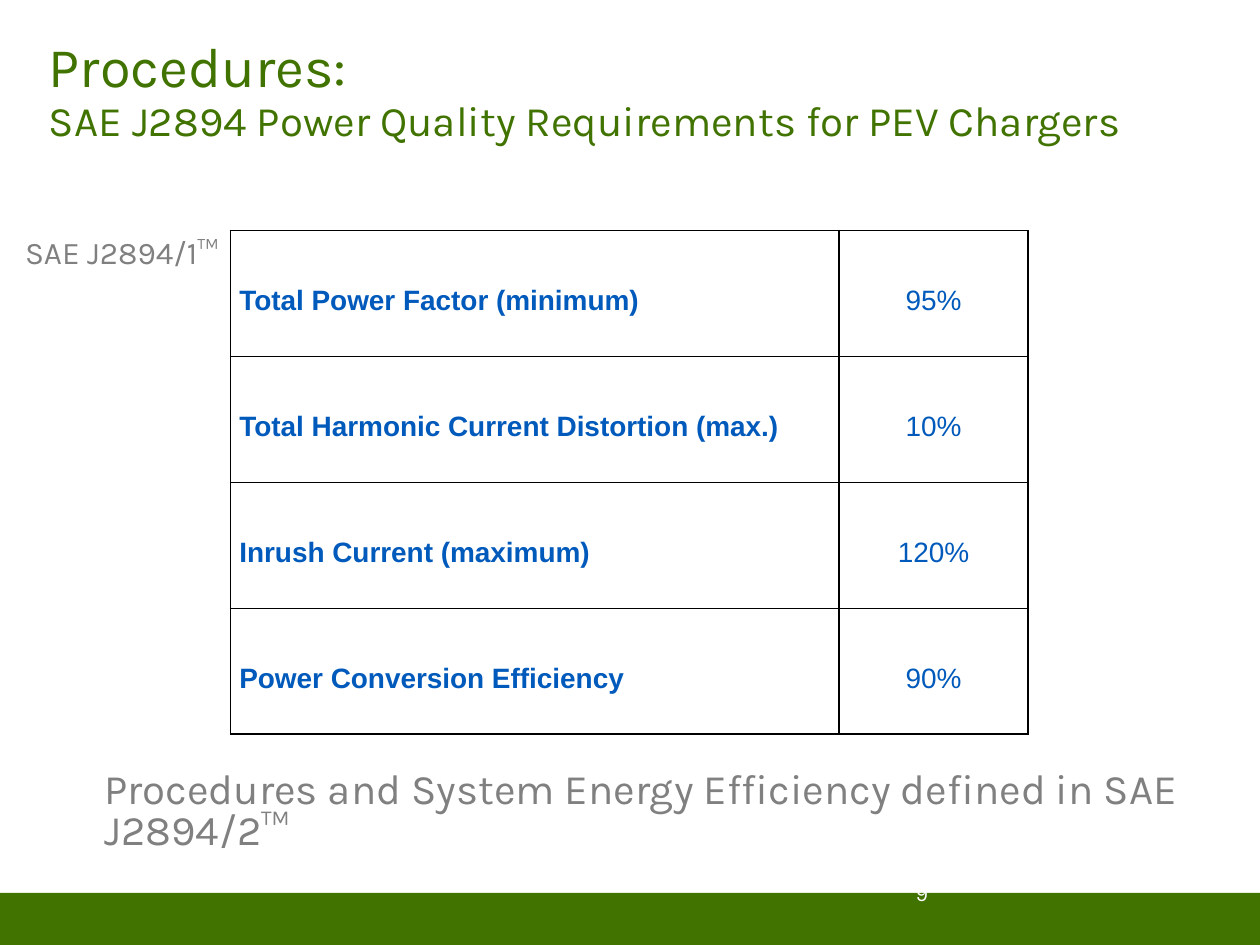
from dataclasses import dataclass

import lxml.etree
import pptx
import pptx.dml.color
import pptx.enum.shapes
import pptx.enum.text
import pptx.oxml.ns
import pptx.util

WIDTH, HEIGHT = 10, 7.5
GREEN, GRAY, BLUE, WHITE, BLACK = "417300", "808080", "005ABB", "FFFFFF", "000000"
MIDDLE = pptx.enum.text.MSO_ANCHOR.MIDDLE
TOP = pptx.enum.text.MSO_ANCHOR.TOP
LEFT = pptx.enum.text.PP_ALIGN.LEFT
CENTER = pptx.enum.text.PP_ALIGN.CENTER


@dataclass
class Area:
    """A rectangle given as shares of the slide's width and height."""
    left: float
    top: float
    width: float
    height: float

    def lengths(self) -> list:
        shares = (self.left, self.top, self.width, self.height)
        return [pptx.util.Inches(share * side)
                for share, side in zip(shares, (WIDTH, HEIGHT) * 2)]


@dataclass
class Label:
    area: Area
    lines: list  # pairs of wording and point size
    color: str
    spacing: float = 1.0
    anchor: pptx.enum.text.MSO_ANCHOR = TOP


@dataclass
class Requirement:
    name: str
    limit: str


def rgb(color: str) -> pptx.dml.color.RGBColor:
    return pptx.dml.color.RGBColor.from_string(color)


def draw_label(page, label: Label) -> None:
    box = page.shapes.add_textbox(*label.area.lengths())
    frame = box.text_frame
    frame.word_wrap = True
    frame.vertical_anchor = label.anchor
    para = frame.paragraphs[0]
    para.line_spacing = label.spacing
    para.font.name = "Karla"
    para.font.color.rgb = rgb(label.color)
    for index, (wording, size) in enumerate(label.lines):
        if index:
            para.add_line_break()
        span = para.add_run()
        span.text = wording
        span.font.size = pptx.util.Pt(size)


def add_borders(cell, color: str, points: float) -> None:
    properties = cell._tc.get_or_add_tcPr()
    name = pptx.oxml.ns.qn
    for index, side in enumerate(("a:lnL", "a:lnR", "a:lnT", "a:lnB")):
        line = lxml.etree.Element(name(side), w=str(pptx.util.Pt(points)))
        fill = lxml.etree.SubElement(line, name("a:solidFill"))
        lxml.etree.SubElement(fill, name("a:srgbClr"), val=color)
        properties.insert(index, line)


def fill_cell(cell, wording: str, bold: bool, alignment) -> None:
    cell.fill.background()
    add_borders(cell, BLACK, 1)
    cell.vertical_anchor = MIDDLE
    cell.margin_left = cell.margin_right = pptx.util.Inches(0.07)
    cell.margin_top = cell.margin_bottom = 0
    para = cell.text_frame.paragraphs[0]
    para.text = wording
    para.alignment = alignment
    para.line_spacing = 1.5
    para.font.name = "Arial"
    para.font.size = pptx.util.Pt(16)
    para.font.bold = bold
    para.font.color.rgb = rgb(BLUE)


def draw_requirements(page, area: Area, requirements: list, shares: tuple) -> None:
    frame = page.shapes.add_table(len(requirements), len(shares), *area.lengths())
    table = frame.table
    table.first_row = table.horz_banding = False
    for column, share in zip(table.columns, shares):
        column.width = pptx.util.Inches(area.width * WIDTH * share)
    for row, requirement in enumerate(requirements):
        fill_cell(table.cell(row, 0), requirement.name, True, LEFT)
        fill_cell(table.cell(row, 1), requirement.limit, False, CENTER)


def draw_band(page, area: Area, color: str) -> None:
    band = page.shapes.add_shape(
        pptx.enum.shapes.MSO_SHAPE.RECTANGLE, *area.lengths())
    band.shadow.inherit = False
    band.fill.solid()
    band.fill.fore_color.rgb = rgb(color)
    band.line.fill.background()


TITLE = Label(
    Area(0.029, 0.036, 0.971, 0.123),
    [("Procedures:", 32),
     ("SAE J2894 Power Quality Requirements for PEV Chargers", 24)],
    GREEN, 0.9, MIDDLE)
STANDARD = Label(Area(0.01, 0.244, 0.258, 0.077), [("SAE J2894/1™", 18)], GRAY, 0.9)
PAGE_NUMBER = Label(Area(0.717, 0.911, 0.233, 0.069), [("9", 12)], WHITE, 1.0, MIDDLE)
SUMMARY = Label(
    Area(0.073, 0.811, 0.892, 0.1),
    [("Procedures and System Energy Efficiency defined in SAE J2894/2™", 24)],
    GRAY, 0.8)
REQUIREMENTS = [
    Requirement("Total Power Factor (minimum)", "95%"),
    Requirement("Total Harmonic Current Distortion (max.)", "10%"),
    Requirement("Inrush Current (maximum)", "120%"),
    Requirement("Power Conversion Efficiency", "90%"),
]


def main() -> None:
    deck = pptx.Presentation()
    deck.slide_width = pptx.util.Inches(WIDTH)
    deck.slide_height = pptx.util.Inches(HEIGHT)
    page = deck.slides.add_slide(deck.slide_layouts[6])

    # Footer band
    draw_band(page, Area(0, 0.945, 1, 0.055), GREEN)

    # Title, standard and page number
    for label in (TITLE, STANDARD, PAGE_NUMBER):
        draw_label(page, label)

    # Limits set by the standard, with the closing remark below
    draw_requirements(page, Area(0.183, 0.244, 0.633, 0.533), REQUIREMENTS, (0.763, 0.237))
    draw_label(page, SUMMARY)

    deck.save("out.pptx")


if __name__ == "__main__":
    main()
